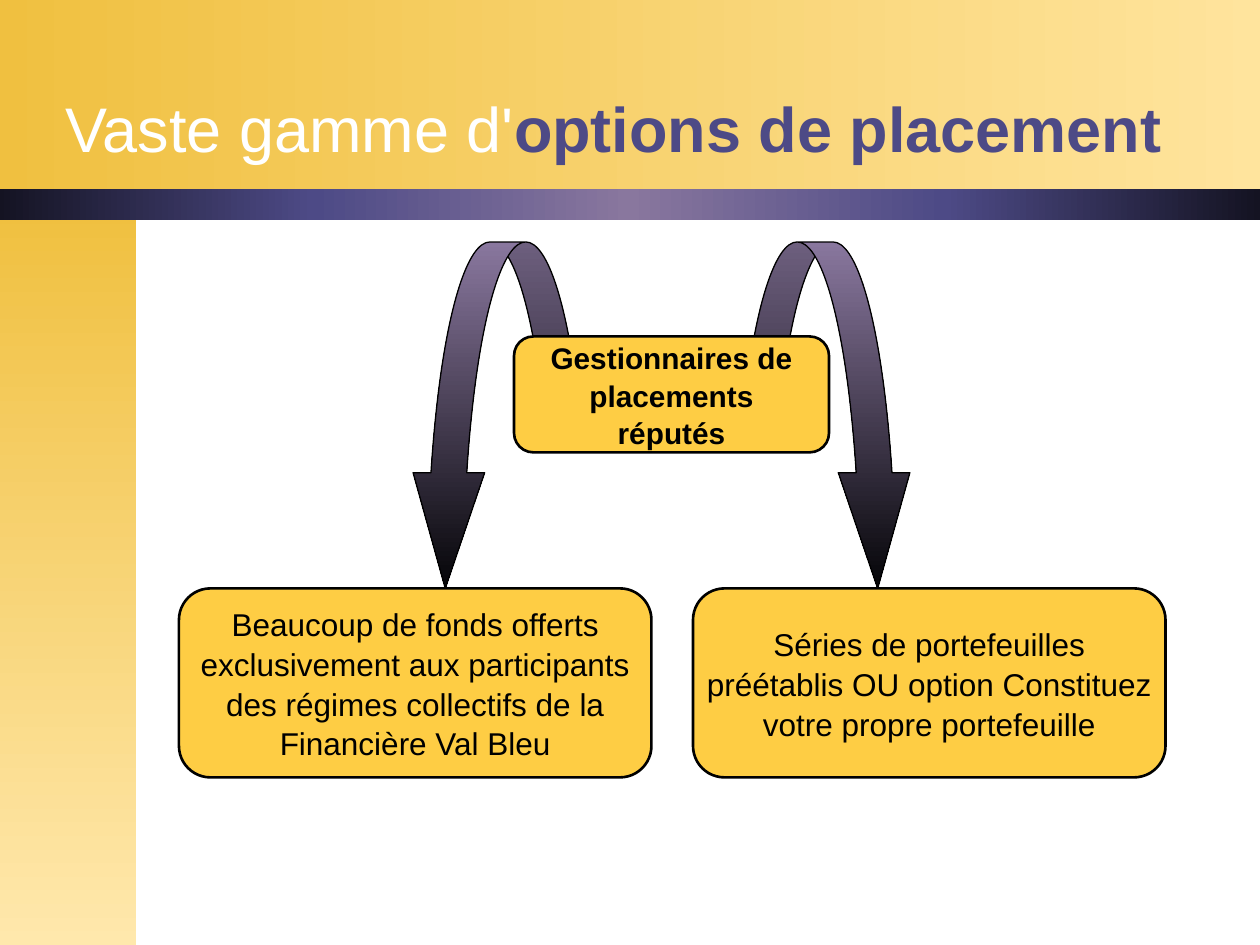
from lxml.etree import SubElement
from pptx import Presentation
from pptx.dml.color import RGBColor
from pptx.enum.shapes import MSO_SHAPE as Shape
from pptx.enum.text import MSO_ANCHOR as Anchor, MSO_AUTO_SIZE as Fit, PP_ALIGN as Align
from pptx.oxml.ns import qn
from pptx.util import Inches, Pt

BLACK, WHITE, PURPLE, YELLOW = "000000", "FFFFFF", "4D4A86", "FECD44"


def paint(part, tone):
    part.solid()
    part.fore_color.rgb = RGBColor.from_string(tone)


def blend(shape, tones, angle):
    """Fill with evenly spaced colours, angle in degrees clockwise."""
    shape.fill.gradient()
    grad = shape.element.spPr.find(qn("a:gradFill"))
    stops = grad.find(qn("a:gsLst"))
    stops[:] = []
    for i, tone in enumerate(tones):
        stop = SubElement(stops, qn("a:gs"), pos=str(100000 * i // (len(tones) - 1)))
        SubElement(stop, qn("a:srgbClr"), val=tone)
    grad.find(qn("a:lin")).set("ang", str(angle * 60000))


def add_part(slide, kind, box, edge=None):
    shape = slide.shapes.add_shape(kind, *map(Inches, box))
    shape.shadow.inherit = False
    if edge:
        paint(shape.line.fill, BLACK)
        shape.line.width = Pt(edge)
    else:
        shape.line.fill.background()
    return shape


def add_run(para, text, size, tone, bold=False):
    run = para.add_run()
    run.text = text
    run.font.name, run.font.size, run.font.bold = "Arial", Pt(size), bold
    paint(run.font.fill, tone)


def add_frame(slide, side, head, band):
    """Gold header and side bar, parted by a dark band."""
    base = head + band
    parts = [
        ((0, 0, 10, head), ["F0C040", "FFE49D"], 0),
        ((0, base - 0.08, side, 7.58 - base), ["F0C040", "FFE8AC"], 90),
        ((-0.02, head, 10.02, band),
         ["141322", PURPLE, "89779E", PURPLE, "141322"], 0),
    ]
    for box, tones, angle in parts:
        blend(add_part(slide, Shape.RECTANGLE, box), tones, angle)


def set_title(slide, box):
    title = slide.shapes.title
    title.left, title.top, title.width, title.height = map(Inches, box)
    title.element.getparent().append(title.element)
    frame = title.text_frame
    frame.vertical_anchor, frame.auto_size = Anchor.BOTTOM, Fit.NONE
    para = frame.paragraphs[0]
    para.alignment = Align.LEFT
    add_run(para, "Vaste gamme d'", 36, WHITE)
    add_run(para, "options de placement", 36, PURPLE, True)


def add_arrow(slide, box, flip=False):
    arrow = add_part(slide, Shape.CURVED_DOWN_ARROW, box, 0.75)
    for i, value in enumerate((0.2, 0.4, 0.647)):
        arrow.adjustments[i] = value
    blend(arrow, ["89779E", "050508"], 90)
    if flip:
        arrow.element.spPr.find(qn("a:xfrm")).set("flipH", "1")


def add_card(slide, box, text, size, inset, bold=False):
    card = add_part(slide, Shape.FLOWCHART_ALTERNATE_PROCESS, box, 1.5)
    paint(card.fill, YELLOW)
    frame = card.text_frame
    frame.word_wrap, frame.vertical_anchor = True, Anchor.MIDDLE
    frame.margin_left = frame.margin_right = Inches(inset)
    frame.margin_top = frame.margin_bottom = 0
    para = frame.paragraphs[0]
    para.alignment, para.line_spacing = Align.CENTER, 1.05
    add_run(para, text, size, BLACK, bold)


def add_chart(slide, left, top):
    """One source card with an arrow down to each of two cards."""
    add_arrow(slide, (left + 4.41, top, 1.42, 2.75))
    add_arrow(slide, (left + 1.83, top, 1.42, 2.75), True)
    mask = add_part(slide, Shape.RECTANGLE, (left + 2.91, top + 1.41, 2.08, 2.58))
    paint(mask.fill, WHITE)
    add_card(slide, (left + 2.66, top + 0.75, 2.5, 0.92),
             "Gestionnaires de placements réputés", 17, 0.14, True)
    texts = (
        "Beaucoup de fonds offerts exclusivement aux participants "
        "des régimes collectifs de la Financière Val Bleu",
        "Séries de portefeuilles préétablis OU option Constituez "
        "votre propre portefeuille",
    )
    for i, text in enumerate(texts):
        add_card(slide, (left + 4.08 * i, top + 2.75, 3.75, 1.5), text, 18, 0.03)


def main():
    deck = Presentation()
    deck.slide_width, deck.slide_height = Inches(10), Inches(7.5)
    slide = deck.slides.add_slide(deck.slide_layouts[5])
    add_frame(slide, 1.08, 1.5, 0.25)
    set_title(slide, (0.42, 0, 9.33, 1.36))
    add_chart(slide, 1.42, 1.92)
    deck.save("out.pptx")


if __name__ == "__main__":
    main()
